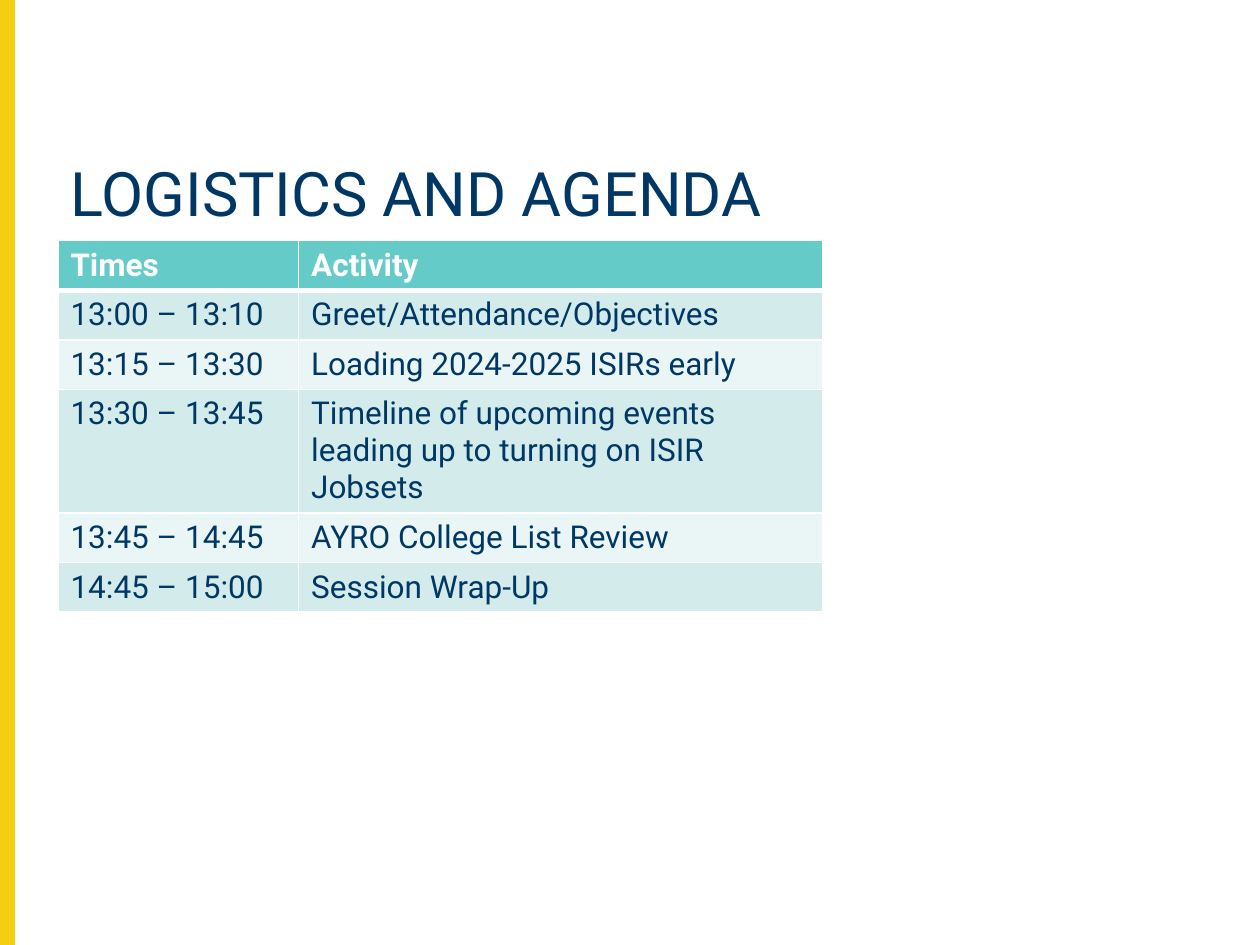
from typing import NamedTuple

from lxml import etree
from pptx import Presentation
from pptx.dml.color import RGBColor
from pptx.enum import shapes, text
from pptx.oxml.ns import qn
from pptx.util import Inches, Pt

FONT = "Roboto"
NAVY = RGBColor(0x00, 0x37, 0x64)
YELLOW = RGBColor(0xF4, 0xCE, 0x12)
TEAL = RGBColor(0x65, 0xCB, 0xC9)
WHITE = RGBColor(0xFF, 0xFF, 0xFF)
BANDS = (RGBColor(0xD3, 0xEC, 0xEB), RGBColor(0xEA, 0xF6, 0xF5))


class AgendaItem(NamedTuple):
    times: str
    activity: str


HEADER = AgendaItem("Times", "Activity")
AGENDA = [
    AgendaItem("13:00 – 13:10", "Greet/Attendance/Objectives"),
    AgendaItem("13:15 – 13:30", "Loading 2024-2025 ISIRs early"),
    AgendaItem("13:30 – 13:45",
               "Timeline of upcoming events leading up to turning on ISIR Jobsets"),
    AgendaItem("13:45 – 14:45", "AYRO College List Review"),
    AgendaItem("14:45 – 15:00", "Session Wrap-Up"),
]
COLUMN_WIDTHS = (1.91, 4.16)
ROW_HEIGHT = 0.37


def set_borders(cell, bottom_width: float) -> None:
    """Add white cell borders, ahead of the fill as the schema requires."""
    properties = cell._tc.get_or_add_tcPr()
    widths = {"a:lnL": 1, "a:lnR": 1, "a:lnT": 1, "a:lnB": bottom_width}
    for position, (tag, width) in enumerate(widths.items()):
        line = etree.Element(qn(tag), w=str(Pt(width)))
        fill = etree.SubElement(line, qn("a:solidFill"))
        etree.SubElement(fill, qn("a:srgbClr"), val=str(WHITE))
        properties.insert(position, line)


def fill_row(table, row: int, item: AgendaItem) -> None:
    is_header = row == 0
    table.rows[row].height = Inches(ROW_HEIGHT)
    for column, content in enumerate(item):
        cell = table.cell(row, column)
        cell.text = content
        cell.fill.solid()
        cell.fill.fore_color.rgb = TEAL if is_header else BANDS[(row - 1) % 2]
        font = cell.text_frame.paragraphs[0].font
        font.name, font.size, font.bold = FONT, Pt(18), is_header
        font.color.rgb = WHITE if is_header else NAVY
        set_borders(cell, bottom_width=3 if is_header else 1)


def add_agenda(slide, items: list[AgendaItem]) -> None:
    table = slide.shapes.add_table(
        len(items), len(COLUMN_WIDTHS), Inches(0.46), Inches(1.91),
        Inches(sum(COLUMN_WIDTHS)), Inches(ROW_HEIGHT * len(items))).table
    for column, width in zip(table.columns, COLUMN_WIDTHS):
        column.width = Inches(width)
    for row, item in enumerate(items):
        fill_row(table, row, item)


def add_side_bar(slide, height: int) -> None:
    bar = slide.shapes.add_shape(
        shapes.MSO_SHAPE.RECTANGLE, 0, 0, Inches(0.11), height)
    bar.shadow.inherit = False
    bar.fill.solid()
    bar.fill.fore_color.rgb = YELLOW
    bar.line.color.rgb = YELLOW
    bar.line.width = Pt(1)


def format_title(title, content: str) -> None:
    title.left, title.top = Inches(0.46), Inches(1.25)
    title.width, title.height = Inches(9.33), Inches(0.79)
    frame = title.text_frame
    frame.text = content
    frame.word_wrap = True
    frame.auto_size = text.MSO_AUTO_SIZE.NONE
    frame.vertical_anchor = text.MSO_ANCHOR.TOP
    paragraph = frame.paragraphs[0]
    paragraph.alignment = text.PP_ALIGN.LEFT
    paragraph.line_spacing = 0.9
    paragraph.font.name, paragraph.font.size = FONT, Pt(35)
    paragraph.font.color.rgb = NAVY


def main() -> None:
    presentation = Presentation()
    presentation.slide_width, presentation.slide_height = Inches(10), Inches(7.5)
    slide = presentation.slides.add_slide(presentation.slide_layouts[5])

    # Accent bar, heading and timetable
    add_side_bar(slide, presentation.slide_height)
    format_title(slide.shapes.title, "LOGISTICS AND AGENDA")
    add_agenda(slide, [HEADER, *AGENDA])

    presentation.save("out.pptx")


if __name__ == "__main__":
    main()
